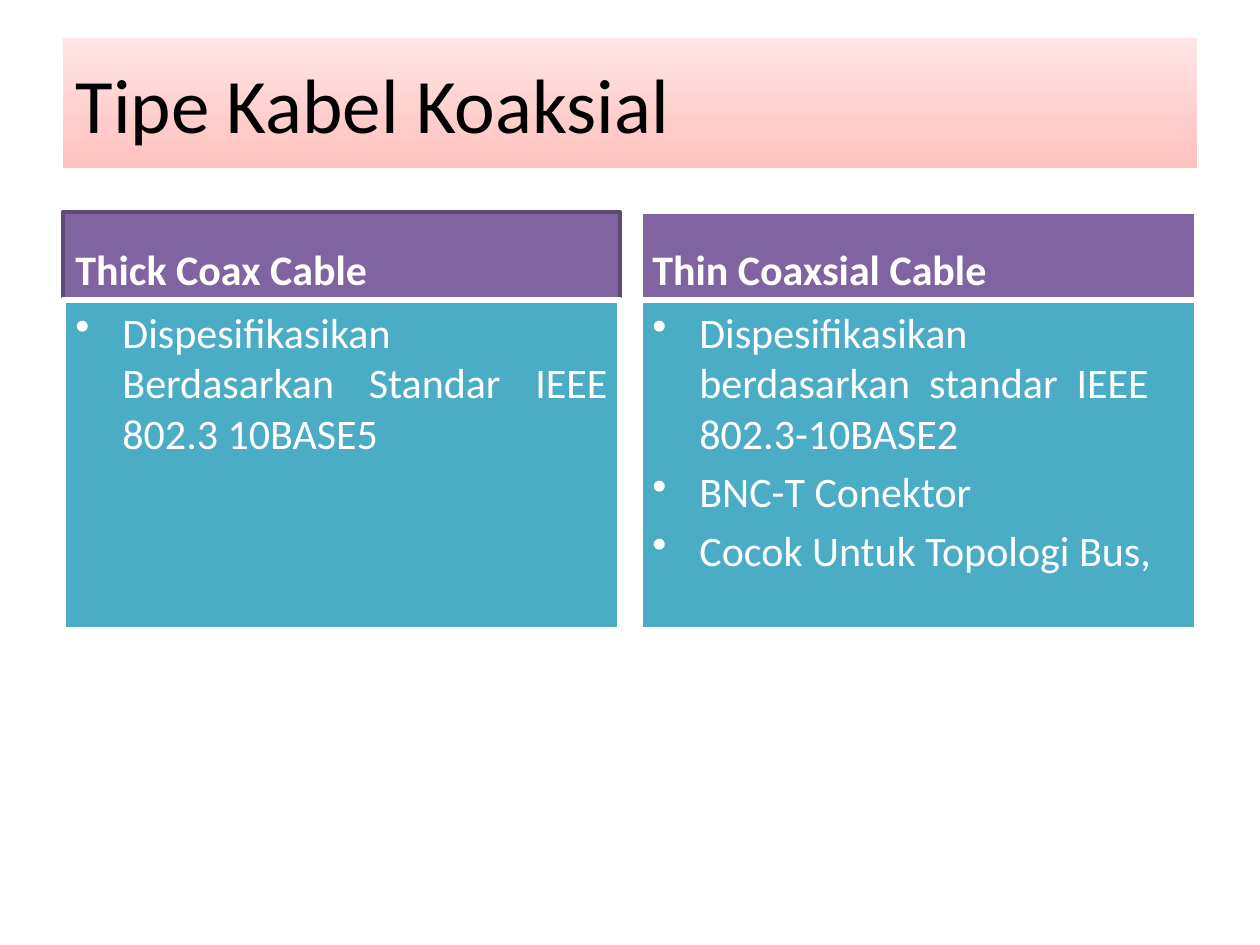
from lxml import etree
from pptx import Presentation
from pptx.dml.color import RGBColor
from pptx.enum import shapes, text
from pptx.oxml import ns
from pptx.util import Cm, Pt

COLORS = {
    "title_low": "FFC1BE",
    "title_high": "FFE5E5",
    "heading": "8064A2",
    "heading_edge": "5E4977",
    "body": "4BACC6",
    "white": "FFFFFF",
    "black": "000000",
}
FONT = "Calibri"
MARGIN, COLUMN_WIDTH, PAGE_WIDTH = 1.27, 11.23, 25.4
HEADING_TOP, HEADING_HEIGHT, BODY_HEIGHT = 4.27, 1.78, 6.65
COLUMNS = [
    {
        "heading": "Thick Coax Cable",
        "edge": "heading_edge",
        "edge_width": 2,
        "items": ["Dispesifikasikan Berdasarkan Standar IEEE 802.3 10BASE5"],
        "align": text.PP_ALIGN.JUSTIFY,
    },
    {
        "heading": "Thin Coaxsial Cable",
        "edge": "white",
        "edge_width": 3,
        "items": [
            "Dispesifikasikan berdasarkan  standar  IEEE 802.3-10BASE2",
            "BNC-T Conektor",
            "Cocok Untuk Topologi Bus,",
        ],
        "align": text.PP_ALIGN.LEFT,
    },
]


def color(name):
    """Return the named colour."""
    return RGBColor.from_string(COLORS[name])


def add_bullet(para):
    """Give a paragraph a hanging white bullet."""
    props = para._p.get_or_add_pPr()
    props.set("marL", str(Cm(0.95)))
    props.set("indent", str(-Cm(0.95)))
    tint = etree.SubElement(props, ns.qn("a:buClr"))
    etree.SubElement(tint, ns.qn("a:srgbClr"), val=COLORS["white"])
    etree.SubElement(props, ns.qn("a:buChar"), char="•")


def write(para, words, size=24, ink="white", bold=False, align=text.PP_ALIGN.LEFT,
          before=4.8, bullet=False):
    """Put formatted text in a paragraph."""
    para.alignment = align
    para.space_before = Pt(before)
    if bullet:
        add_bullet(para)
    span = para.add_run()
    span.text = words
    span.font.name = FONT
    span.font.size = Pt(size)
    span.font.bold = bold
    span.font.color.rgb = color(ink)


def add_panel(page, left, top, height, fill, edge, edge_width, anchor, items, **style):
    """Add a filled rectangle holding one paragraph per item."""
    box = page.shapes.add_shape(shapes.MSO_SHAPE.RECTANGLE, Cm(left), Cm(top),
                                Cm(COLUMN_WIDTH), Cm(height))
    box.shadow.inherit = False
    box.fill.solid()
    box.fill.fore_color.rgb = color(fill)
    box.line.color.rgb = color(edge)
    box.line.width = Pt(edge_width)
    frame = box.text_frame
    frame.word_wrap = True
    frame.vertical_anchor = anchor
    for index, words in enumerate(items):
        para = frame.add_paragraph() if index else frame.paragraphs[0]
        write(para, words, **style)


def add_title(page, words):
    """Place the title on its gradient band."""
    box = page.shapes.title
    box.left, box.top = Cm(MARGIN), Cm(0.76)
    box.width, box.height = Cm(PAGE_WIDTH - 2 * MARGIN), Cm(2.62)
    box.fill.gradient()
    box.fill.gradient_angle = 90
    for stop, name in zip(box.fill.gradient_stops, ("title_low", "title_high")):
        stop.color.rgb = color(name)
    frame = box.text_frame
    frame.word_wrap = True
    frame.auto_size = text.MSO_AUTO_SIZE.NONE
    frame.vertical_anchor = text.MSO_ANCHOR.MIDDLE
    write(frame.paragraphs[0], words, size=44, ink="black", before=0)


def add_column(page, left, column):
    """Add a heading panel and the bulleted panel below it."""
    add_panel(page, left, HEADING_TOP, HEADING_HEIGHT, "heading", column["edge"],
              column["edge_width"], text.MSO_ANCHOR.BOTTOM, [column["heading"]], bold=True)
    add_panel(page, left, HEADING_TOP + HEADING_HEIGHT, BODY_HEIGHT, "body", "white", 3,
              text.MSO_ANCHOR.TOP, column["items"], align=column["align"], bullet=True)


def main():
    """Build and save the coaxial cable slide."""
    deck = Presentation()
    deck.slide_width, deck.slide_height = Cm(PAGE_WIDTH), Cm(19.05)
    page = deck.slides.add_slide(deck.slide_layouts.get_by_name("Title Only"))
    add_title(page, "Tipe Kabel Koaksial")
    for left, column in zip((MARGIN, PAGE_WIDTH - MARGIN - COLUMN_WIDTH), COLUMNS):
        add_column(page, left, column)
    deck.save("out.pptx")


if __name__ == "__main__":
    main()
